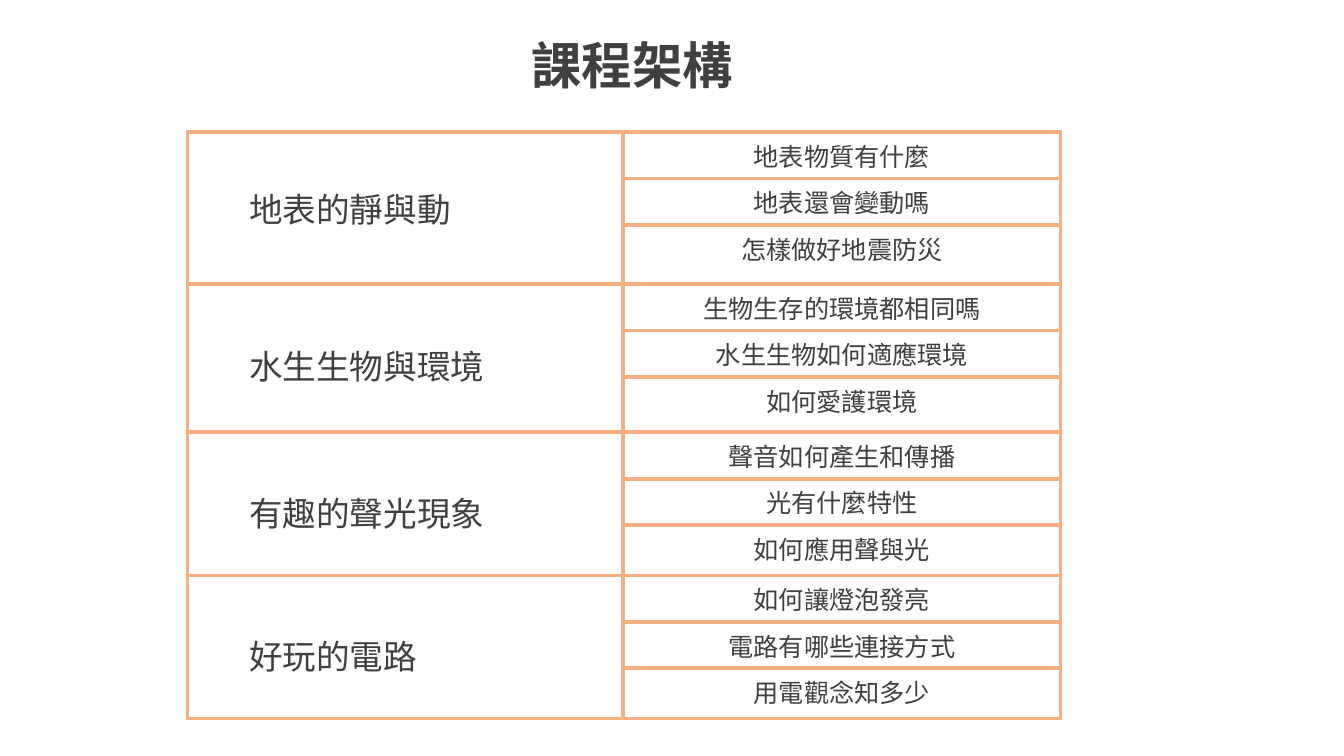
"""Build the course structure slide: four units with three topics each."""
from dataclasses import dataclass

from lxml import etree
from pptx import Presentation
from pptx.dml.color import RGBColor
from pptx.enum.text import MSO_ANCHOR, PP_ALIGN
from pptx.oxml.ns import qn
from pptx.util import Inches, Pt

LEFT, CENTER = PP_ALIGN.LEFT, PP_ALIGN.CENTER
TOP, MIDDLE, BOTTOM = MSO_ANCHOR.TOP, MSO_ANCHOR.MIDDLE, MSO_ANCHOR.BOTTOM


@dataclass(frozen=True)
class Theme:
    font: str = "Noto Sans CJK SC"
    ink: RGBColor = RGBColor(0x40, 0x40, 0x40)
    paper: RGBColor = RGBColor(0xFF, 0xFF, 0xFF)
    rule: str = "F4B081"
    rule_width: int = Pt(3)
    title_size: int = Pt(36)
    unit_size: int = Pt(24)
    topic_size: int = Pt(18)


THEME = Theme()

UNITS = [
    ("地表的靜與動", 0.05, 0.59, ["地表物質有什麼", "地表還會變動嗎", "怎樣做好地震防災"]),
    ("水生生物與環境", 0.18, 0.55, ["生物生存的環境都相同嗎", "水生生物如何適應環境", "如何愛護環境"]),
    ("有趣的聲光現象", 0.21, 0.5, ["聲音如何產生和傳播", "光有什麼特性", "如何應用聲與光"]),
    ("好玩的電路", 0.21, 0.5, ["如何讓燈泡發亮", "電路有哪些連接方式", "用電觀念知多少"]),
]
TOPICS_PER_UNIT = 3
TOPIC_HEIGHT = 0.46


def write(frame, text, size, align, bold=False):
    """Fill a text frame with one styled paragraph."""
    paragraph = frame.paragraphs[0]
    paragraph.text = text
    paragraph.alignment = align
    font = paragraph.font
    font.name, font.size, font.bold = THEME.font, size, bold
    font.color.rgb = THEME.ink
    defaults = paragraph._p.pPr.find(qn("a:defRPr"))
    etree.SubElement(defaults, qn("a:ea"), typeface=THEME.font)
    return paragraph


def frame_cell(cell):
    """Give a cell its four borders and its fill."""
    properties = cell._tc.get_or_add_tcPr()
    for side in ("a:lnL", "a:lnR", "a:lnT", "a:lnB"):
        line = etree.SubElement(properties, qn(side), w=str(THEME.rule_width))
        fill = etree.SubElement(line, qn("a:solidFill"))
        etree.SubElement(fill, qn("a:srgbClr"), val=THEME.rule)
    cell.fill.solid()
    cell.fill.fore_color.rgb = THEME.paper


deck = Presentation()
deck.slide_width, deck.slide_height = Inches(13.33), Inches(7.5)
slide = deck.slides.add_slide(deck.slide_layouts[6])

heading = slide.shapes.add_textbox(Inches(5.17), Inches(0.35), Inches(2.21), Inches(0.65)).text_frame
heading.word_wrap = True
heading.vertical_anchor = BOTTOM
write(heading, "課程架構", THEME.title_size, LEFT, bold=True).line_spacing = 0.9

outline = slide.shapes.add_table(
    len(UNITS) * TOPICS_PER_UNIT, 2, Inches(1.86), Inches(1.31), Inches(8.66), Inches(5.82)
).table
outline.first_row = outline.horz_banding = False
outline.columns[0].width, outline.columns[1].width = Inches(4.32), Inches(4.34)

for cell in outline.iter_cells():
    frame_cell(cell)

for unit_index, (unit, top_margin, last_height, topics) in enumerate(UNITS):
    first = unit_index * TOPICS_PER_UNIT
    last = first + TOPICS_PER_UNIT - 1
    for row, topic in enumerate(topics, first):
        outline.rows[row].height = Inches(last_height if row == last else TOPIC_HEIGHT)
        topic_cell = outline.cell(row, 1)
        topic_cell.vertical_anchor = TOP
        write(topic_cell.text_frame, topic, THEME.topic_size, CENTER)
    unit_cell = outline.cell(first, 0)
    unit_cell.merge(outline.cell(last, 0))
    unit_cell.vertical_anchor = MIDDLE
    unit_cell.margin_left = Inches(0.61)
    unit_cell.margin_top = Inches(top_margin)
    write(unit_cell.text_frame, unit, THEME.unit_size, LEFT)

deck.save("out.pptx")
